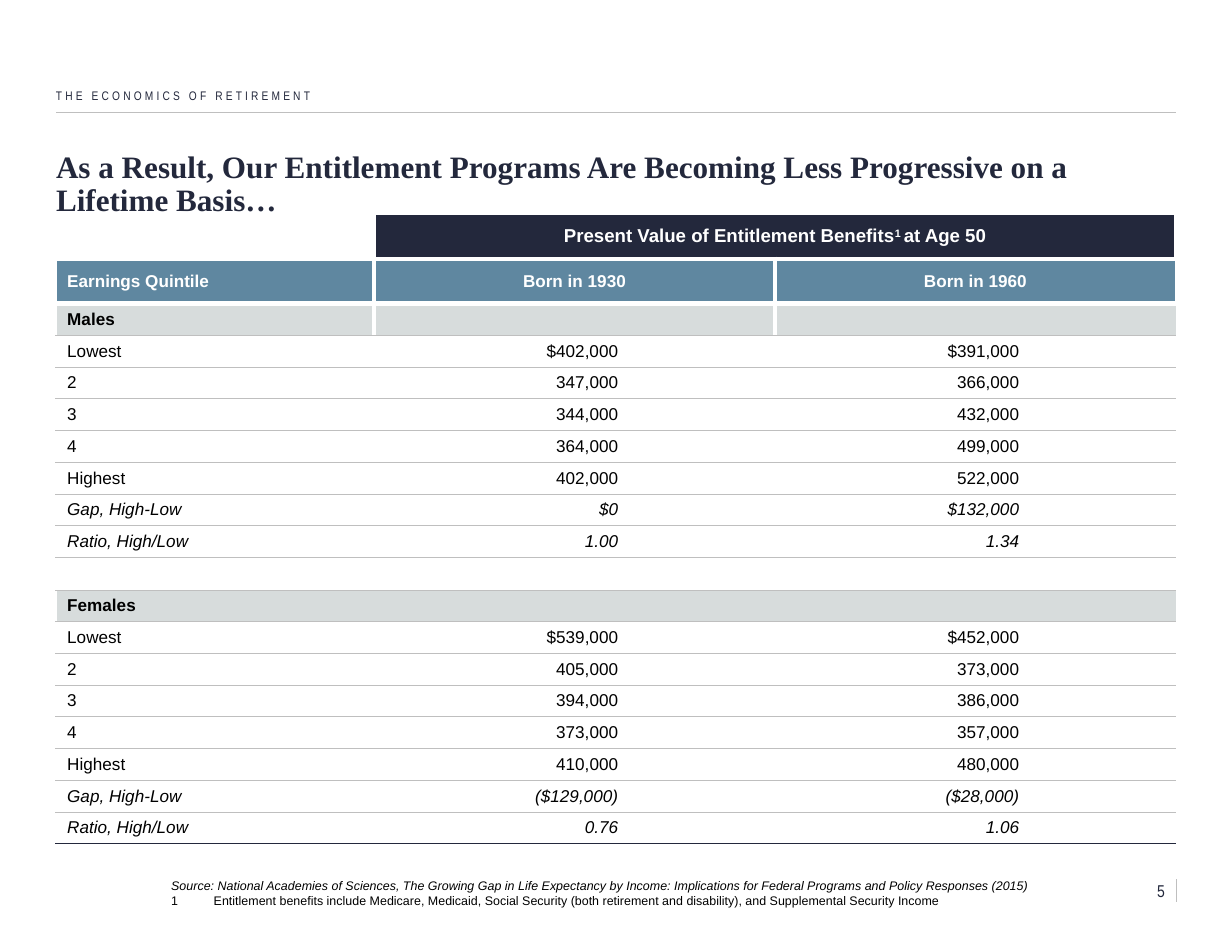
from lxml import etree
from pptx import Presentation
from pptx.dml.color import RGBColor
from pptx.enum.shapes import MSO_CONNECTOR
from pptx.enum.text import MSO_ANCHOR, MSO_AUTO_SIZE, PP_ALIGN
from pptx.oxml.ns import qn
from pptx.util import Inches, Pt

LEFT, CENTER, RIGHT = PP_ALIGN.LEFT, PP_ALIGN.CENTER, PP_ALIGN.RIGHT
TOP, MIDDLE, BOTTOM = MSO_ANCHOR.TOP, MSO_ANCHOR.MIDDLE, MSO_ANCHOR.BOTTOM

# Content
SECTION = "THE ECONOMICS OF RETIREMENT"
TITLE = ("As a Result, Our Entitlement Programs Are Becoming Less "
         "Progressive on a Lifetime Basis…")
SPANNER = [("Present Value of Entitlement Benefits", False), ("1 ", True), ("at Age 50", False)]
COLUMN_HEADS = ["Earnings Quintile", "Born in 1930", "Born in 1960"]
QUINTILES = ["Lowest", "2", "3", "4", "Highest", "Gap, High-Low", "Ratio, High/Low"]
BENEFITS = {
    "Males": (
        ["$402,000", "347,000", "344,000", "364,000", "402,000", "$0", "1.00"],
        ["$391,000", "366,000", "432,000", "499,000", "522,000", "$132,000", "1.34"],
    ),
    "Females": (
        ["$539,000", "405,000", "394,000", "373,000", "410,000", "($129,000)", "0.76"],
        ["$452,000", "373,000", "386,000", "357,000", "480,000", "($28,000)", "1.06"],
    ),
}
SOURCE = ("Source: National Academies of Sciences, The Growing Gap in Life Expectancy by "
          "Income: Implications for Federal Programs and Policy Responses (2015)")
FOOTNOTE = ("1\tEntitlement benefits include Medicare, Medicaid, Social Security (both "
            "retirement and disability), and Supplemental Security Income")
PAGE = "5"

THEME = {
    "navy": "23283C", "blue": "5F87A0", "pale": "D7DCDC", "rule": "BFBFBF",
    "white": "FFFFFF", "black": "000000",
    "serif": "Times New Roman", "sans": "Arial", "narrow": "Arial Narrow",
    "title": 20, "spanner": 12, "body": 11, "small": 8,
}

# Layout, in inches
MARGIN, WIDTH = 0.5, 10
TABLE_TOP, TABLE_HEIGHT, HEAD_HEIGHT = 1.91, 5.62, 0.4
COLUMN_WIDTHS = [2.84, 3.58, 3.58]
LABEL_INSETS = (0.1, 0.05, 0.1, 0.05)
HEAD_INSETS = (0.08, 0.04, 0.08, 0.04)
VALUE_INSETS = (0.02, 0.01, 1.4, 0.01)


def rgb(name):
    return RGBColor.from_string(THEME[name])


def add_run(paragraph, text, size, color, font="sans", bold=False, italic=False):
    run = paragraph.add_run()
    run.text = text
    run.font.name = THEME[font]
    run.font.size = Pt(THEME[size])
    run.font.color.rgb = rgb(color)
    run.font.bold, run.font.italic = bold, italic
    return run


def set_insets(holder, insets):
    (holder.margin_left, holder.margin_top,
     holder.margin_right, holder.margin_bottom) = map(Inches, insets)


def set_frame(frame, insets, anchor, wrap=True):
    set_insets(frame, insets)
    frame.vertical_anchor = anchor
    frame.word_wrap = wrap
    frame.auto_size = MSO_AUTO_SIZE.NONE
    return frame


def add_text_frame(slide, box, insets, anchor, wrap=True):
    return set_frame(slide.shapes.add_textbox(*map(Inches, box)).text_frame,
                     insets, anchor, wrap)


def add_rule(slide, x1, y1, x2, y2):
    rule = slide.shapes.add_connector(MSO_CONNECTOR.STRAIGHT, *map(Inches, (x1, y1, x2, y2)))
    rule.line.color.rgb = rgb("rule")
    rule.line.width = Pt(0.5)
    etree.SubElement(rule._element.spPr, qn("a:effectLst"))


def set_border(cell, side, border):
    line = etree.SubElement(cell._tc.get_or_add_tcPr(), qn(f"a:ln{side}"))
    if border is None:
        line.set("w", "0")
        etree.SubElement(line, qn("a:noFill"))
        return
    color, points = border
    line.set("w", str(Pt(points)))
    fill = etree.SubElement(line, qn("a:solidFill"))
    etree.SubElement(fill, qn("a:srgbClr"), val=THEME[color])


def table_rows():
    """Each row: kind and three cell texts."""
    rows = [("spanner", ["", "", ""]), ("head", COLUMN_HEADS)]
    for group, (born_1930, born_1960) in BENEFITS.items():
        if len(rows) > 2:
            rows.append(("gap", ["", "", ""]))
        rows.append(("group", [group, "", ""]))
        for label, *values in zip(QUINTILES, born_1930, born_1960):
            kind = "summary" if label.startswith(("Gap", "Ratio")) else "value"
            rows.append((kind, [label, *values]))
    return rows


def add_benefits_table(slide):
    rows = table_rows()
    count = len(rows)
    table = slide.shapes.add_table(count, 3, *map(
        Inches, (MARGIN, TABLE_TOP, WIDTH, TABLE_HEIGHT))).table
    table.first_row = table.horz_banding = False
    for column, width in zip(table.columns, COLUMN_WIDTHS):
        column.width = Inches(width)
    body_height = (TABLE_HEIGHT - 2 * HEAD_HEIGHT) / (count - 2)

    # Horizontal edges: thick white around heads, hairlines between rows, navy at the foot
    edges = ([("white", 1)] + [("white", 3)] * 2
             + [("rule", 0.5)] * (count - 3) + [("navy", 1)])
    fills = {"head": "blue", "group": "pale"}

    for r, (kind, texts) in enumerate(rows):
        table.rows[r].height = Inches(HEAD_HEIGHT if r < 2 else body_height)
        inner = ("white", 3) if r < 3 else None
        for c, text in enumerate(texts):
            cell = table.cell(r, c)
            set_border(cell, "L", ("white", 1) if c == 0 else inner)
            set_border(cell, "R", inner if c < 2 else ("white", 1) if r < 2 else None)
            set_border(cell, "T", edges[r])
            set_border(cell, "B", edges[r + 1])
            fill = "navy" if kind == "spanner" and c else fills.get(kind)
            if fill:
                cell.fill.solid()
                cell.fill.fore_color.rgb = rgb(fill)
            else:
                cell.fill.background()

            in_head = r < 2
            cell.vertical_anchor = MIDDLE
            set_insets(cell, LABEL_INSETS if c == 0 else HEAD_INSETS if in_head else VALUE_INSETS)
            paragraph = cell.text_frame.paragraphs[0]
            paragraph.alignment = LEFT if c == 0 else CENTER if in_head else RIGHT
            if text:
                add_run(paragraph, text, "body", "white" if in_head else "black",
                        bold=kind in ("head", "group"), italic=kind == "summary")
            elif (r, c) != (0, 1):
                etree.SubElement(paragraph._p, qn("a:endParaRPr"), sz=str(THEME["body"] * 100))

    # Heading across both birth years
    spanner = table.cell(0, 1)
    spanner.merge(table.cell(0, 2))
    for text, raised in SPANNER:
        run = add_run(spanner.text_frame.paragraphs[0], text, "spanner", "white", bold=True)
        if raised:
            run.font._element.set("baseline", "30000")


def main():
    deck = Presentation()
    deck.slide_width, deck.slide_height = Inches(11), Inches(8.5)
    slide = deck.slides.add_slide(deck.slide_layouts[5])

    # Rules of the page frame
    add_rule(slide, 10.5, 7.85, 10.5, 8.05)
    add_rule(slide, MARGIN, 1, MARGIN + WIDTH, 1)

    # Title
    title = slide.shapes.title
    title.left, title.top, title.width, title.height = map(Inches, (MARGIN, 1.35, WIDTH, 0.71))
    heading = set_frame(title.text_frame, (0, 0, 0, 0.1), TOP).paragraphs[0]
    heading.alignment, heading.line_spacing = LEFT, 0.9
    add_run(heading, TITLE, "title", "navy", "serif", bold=True)

    # Section label
    section = add_text_frame(slide, (MARGIN, 0.75, 8.4, 0.2), (0, 0, 3.6, 0.03), BOTTOM)
    label = add_run(section.paragraphs[0], SECTION, "small", "navy", "narrow")
    label.font._element.set("spc", "200")

    # Source and footnote, with a hanging indent
    notes = add_text_frame(slide, (1.43, 7.79, 8.12, 0.37), LABEL_INSETS, TOP)
    for paragraph, text in ((notes.paragraphs[0], SOURCE), (notes.add_paragraph(), FOOTNOTE)):
        properties = paragraph._p.get_or_add_pPr()
        properties.set("marL", str(Inches(0.38)))
        properties.set("indent", str(Inches(-0.38)))
        add_run(paragraph, text, "small", "black", italic=text == SOURCE)

    add_benefits_table(slide)

    # Page number
    page = add_text_frame(slide, (9.8, 7.85, 0.7, 0.2), (0, 0, 0.1, 0), MIDDLE, wrap=False)
    page.paragraphs[0].alignment = RIGHT
    add_run(page.paragraphs[0], PAGE, "body", "navy", "narrow")

    deck.save("out.pptx")


if __name__ == "__main__":
    main()
